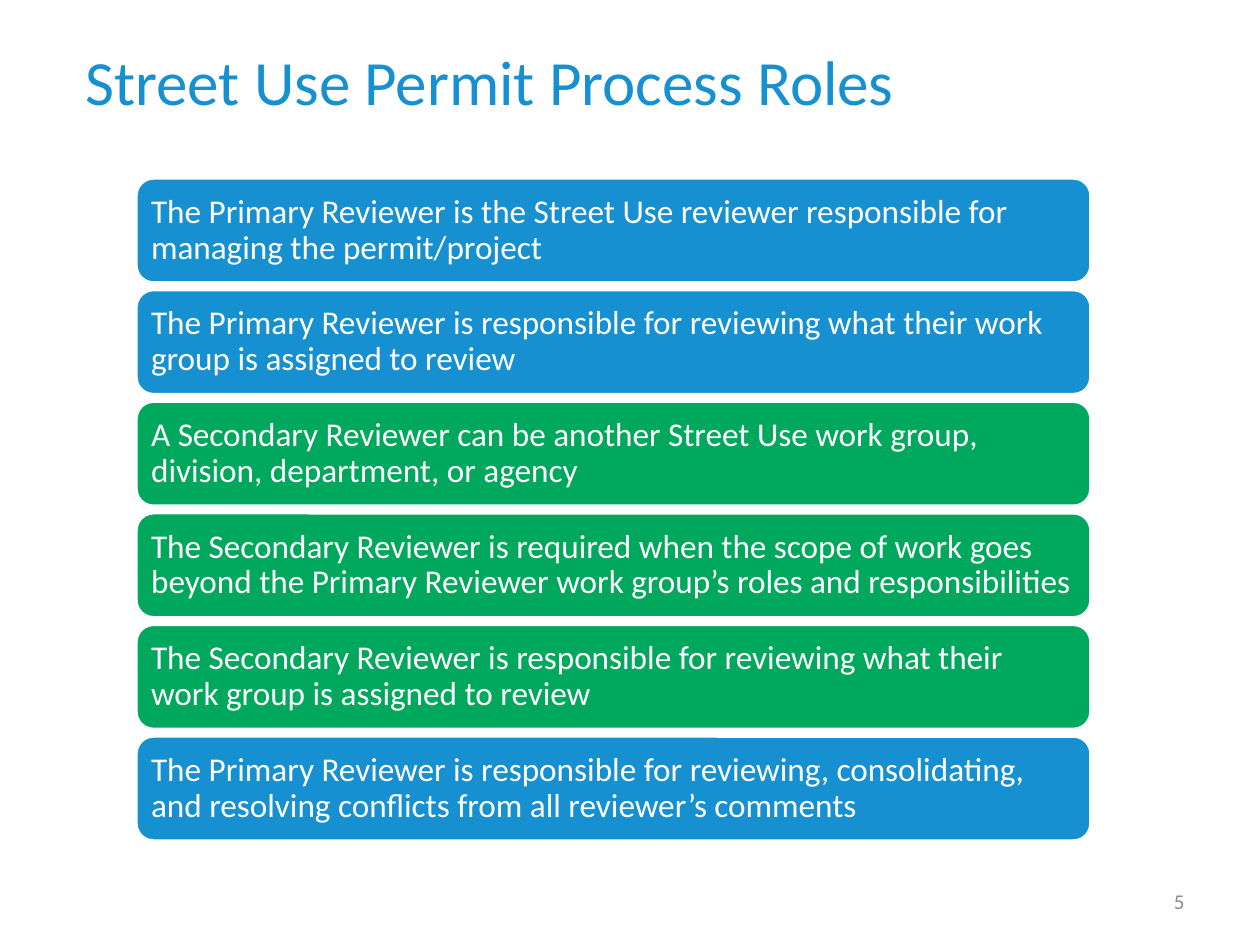
from pptx import Presentation
from pptx.dml.color import RGBColor
from pptx.enum.shapes import MSO_SHAPE as Shape
from pptx.enum.text import MSO_ANCHOR as Anchor, PP_ALIGN as Align
from pptx.util import Pt

SCALE = 914400 / 126
BLUE, GREEN, WHITE, GREY = "1690D0", "00A85D", "FFFFFF", "8C8C8C"

TITLE = "Street Use Permit Process Roles"
PAGE_NUMBER = "5"
ROLES = [
    ("The Primary Reviewer is the Street Use reviewer responsible for managing the permit/project", BLUE),
    ("The Primary Reviewer is responsible for reviewing what their work group is assigned to review", BLUE),
    ("A Secondary Reviewer can be another Street Use work group, division, department, or agency", GREEN),
    ("The Secondary Reviewer is required when the scope of work goes beyond the Primary Reviewer "
     "work group’s roles and responsibilities", GREEN),
    ("The Secondary Reviewer is responsible for reviewing what their work group is assigned to review", GREEN),
    ("The Primary Reviewer is responsible for reviewing, consolidating, and resolving conflicts "
     "from all reviewer’s comments", BLUE),
]
LEFT, FIRST_TOP, LAST_TOP, WIDTH, HEIGHT = 136, 178, 736, 955, 105
ROLE_INSET = 10


def px(length):
    return round(length * SCALE)


def box(*lengths):
    return [px(length) for length in lengths]


def rgb(value):
    return RGBColor.from_string(value)


def write(holder, text, size, color, align=Align.LEFT, spacing=1.0, **frame_format):
    frame = holder.text_frame
    formats = {"word_wrap": True, "vertical_anchor": Anchor.MIDDLE, **frame_format}
    for key, value in formats.items():
        setattr(frame, key, value)
    paragraph = frame.paragraphs[0]
    paragraph.text = text
    paragraph.alignment = align
    paragraph.line_spacing = spacing
    for key, value in {"name": "Calibri", "size": Pt(size)}.items():
        setattr(paragraph.font, key, value)
    paragraph.font.color.rgb = rgb(color)


def add_role(shapes, top, text, color):
    role = shapes.add_shape(Shape.ROUNDED_RECTANGLE, *box(LEFT, top, WIDTH, HEIGHT))
    role.shadow.inherit = False
    role.fill.solid()
    role.fill.fore_color.rgb = rgb(color)
    role.line.color.rgb = rgb(WHITE)
    role.line.width = Pt(2)
    insets = {f"margin_{side}": px(ROLE_INSET) for side in ("left", "top", "right", "bottom")}
    write(role, text, 19, WHITE, spacing=0.9, **insets)


def main():
    """Build the slide of reviewer roles."""
    deck = Presentation()
    deck.slide_width, deck.slide_height = box(1260, 945)
    shapes = deck.slides.add_slide(deck.slide_layouts[6]).shapes
    write(shapes.add_textbox(*box(73, 1, 1134, 158)), TITLE, 36, BLUE)
    pitch = (LAST_TOP - FIRST_TOP) / (len(ROLES) - 1)
    for row, (text, color) in enumerate(ROLES):
        add_role(shapes, FIRST_TOP + row * pitch, text, color)
    write(shapes.add_textbox(*box(903, 876, 294, 50)), PAGE_NUMBER, 12, GREY, Align.RIGHT)
    deck.save("out.pptx")


if __name__ == "__main__":
    main()
